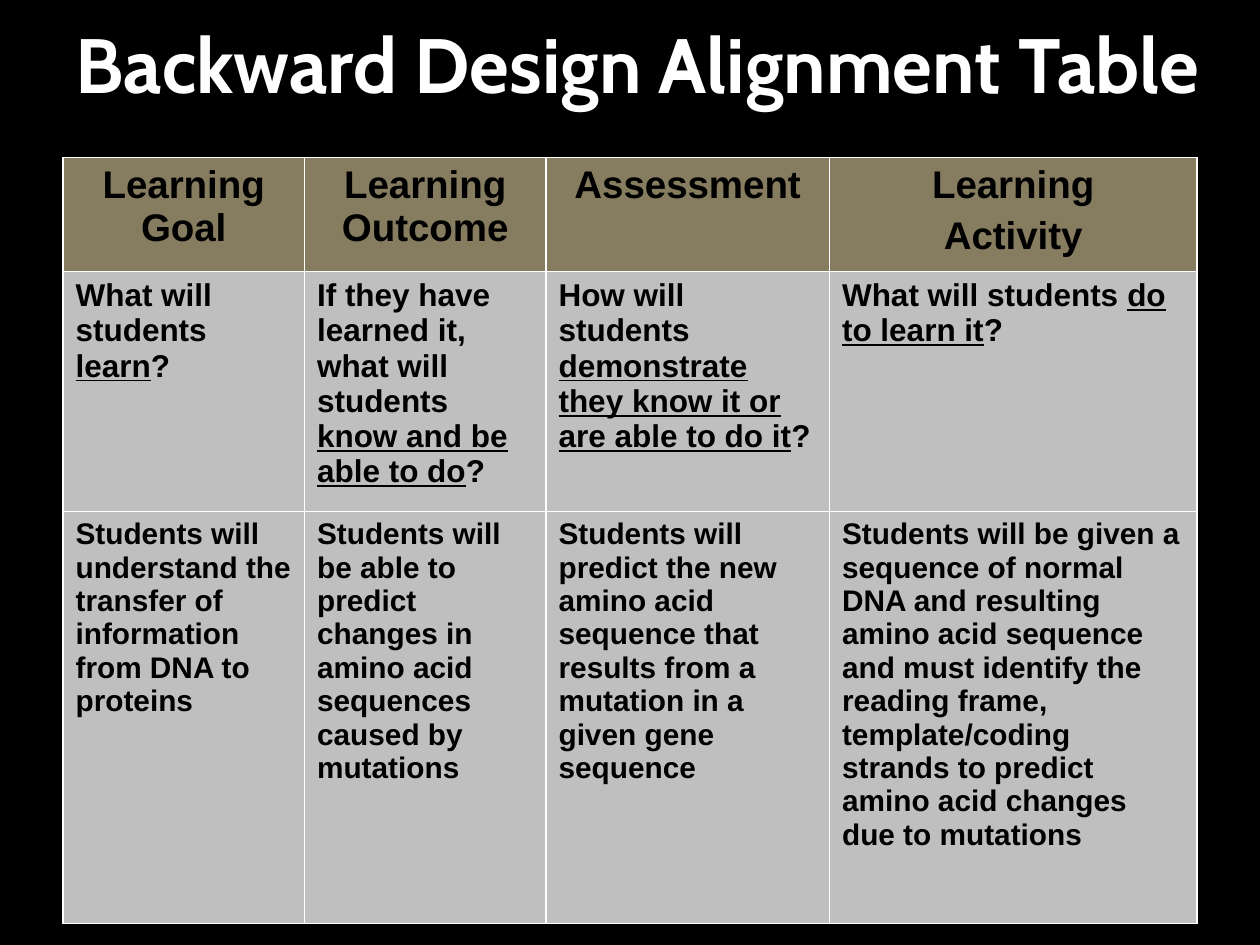
import lxml.etree
import pptx
import pptx.dml.color
import pptx.enum.text
import pptx.oxml.ns
import pptx.util

Pt = pptx.util.Pt
RGBColor = pptx.dml.color.RGBColor
ALIGN = pptx.enum.text.PP_ALIGN
qn = pptx.oxml.ns.qn

BLACK = RGBColor(0x00, 0x00, 0x00)
WHITE = RGBColor(0xFF, 0xFF, 0xFF)
KHAKI = RGBColor(0x86, 0x7C, 0x5F)
SILVER = RGBColor(0xBF, 0xBF, 0xBF)

COLUMN_WIDTHS = [138, 138, 162, 210]

# Underscores enclose underlined words; a line break starts a new paragraph
ROWS = [
    {"height": 65.2, "size": 22, "fill": KHAKI, "align": ALIGN.CENTER, "texts": [
        "Learning Goal",
        "Learning Outcome",
        "Assessment",
        "Learning\nActivity"]},
    {"height": 137, "size": 18, "fill": SILVER, "align": ALIGN.LEFT, "texts": [
        "What will students _learn_?",
        "If they have learned it, what will students _know and be able to do_?",
        "How will students _demonstrate they know it or are able to do it_?",
        "What will students _do to learn it_?"]},
    {"height": 235.5, "size": 17, "fill": SILVER, "align": ALIGN.LEFT, "texts": [
        "Students will understand the transfer of information from DNA to proteins",
        "Students will be able to predict changes in amino acid sequences caused by mutations",
        "Students will predict the new amino acid sequence that results from a mutation "
        "in a given gene sequence",
        "Students will be given a sequence of normal DNA and resulting amino acid sequence "
        "and must identify the reading frame, template/coding strands to predict amino acid "
        "changes due to mutations"]},
]


def add_span(para, text, color, formats):
    span = para.add_run()
    span.text = text
    span.font.color.rgb = color
    for name, value in formats.items():
        setattr(span.font, name, value)


def add_borders(cell, color, width):
    properties = cell._tc.get_or_add_tcPr()
    for position, side in enumerate(["lnL", "lnR", "lnT", "lnB"]):
        line = lxml.etree.Element(qn("a:" + side), w=str(Pt(width)))
        fill = lxml.etree.SubElement(line, qn("a:solidFill"))
        lxml.etree.SubElement(fill, qn("a:srgbClr"), val=str(color))
        properties.insert(position, line)


# Page
deck = pptx.Presentation()
deck.slide_width, deck.slide_height = Pt(720), Pt(540)
page = deck.slides.add_slide(deck.slide_layouts[5])
page.background.fill.solid()
page.background.fill.fore_color.rgb = BLACK

# Title
title = page.shapes.title
title.left, title.top, title.width, title.height = Pt(36), Pt(6), Pt(666), Pt(84)
frame = title.text_frame
frame.auto_size = pptx.enum.text.MSO_AUTO_SIZE.NONE
frame.vertical_anchor = pptx.enum.text.MSO_ANCHOR.TOP
para = frame.paragraphs[0]
para.alignment = ALIGN.LEFT
para.space_before = Pt(20)
add_span(para, "Backward Design Alignment Table", WHITE,
         {"name": "Cabin", "size": Pt(44), "bold": True})

# Alignment table
table = page.shapes.add_table(
    len(ROWS), len(COLUMN_WIDTHS), Pt(36), Pt(90),
    Pt(sum(COLUMN_WIDTHS)), Pt(sum(row["height"] for row in ROWS))).table
for column, width in zip(table.columns, COLUMN_WIDTHS):
    column.width = Pt(width)

for row_index, row in enumerate(ROWS):
    table.rows[row_index].height = Pt(row["height"])
    for column_index, text in enumerate(row["texts"]):
        cell = table.cell(row_index, column_index)
        cell.fill.solid()
        cell.fill.fore_color.rgb = row["fill"]
        add_borders(cell, WHITE, 1)
        for line_index, line in enumerate(text.split("\n")):
            frame = cell.text_frame
            para = frame.add_paragraph() if line_index else frame.paragraphs[0]
            para.alignment = row["align"]
            para.space_before = Pt(0.2 * row["size"])
            for part_index, part in enumerate(line.split("_")):
                add_span(para, part, BLACK, {
                    "name": "Arial", "size": Pt(row["size"]), "bold": True,
                    "underline": part_index % 2 == 1})

deck.save("out.pptx")
